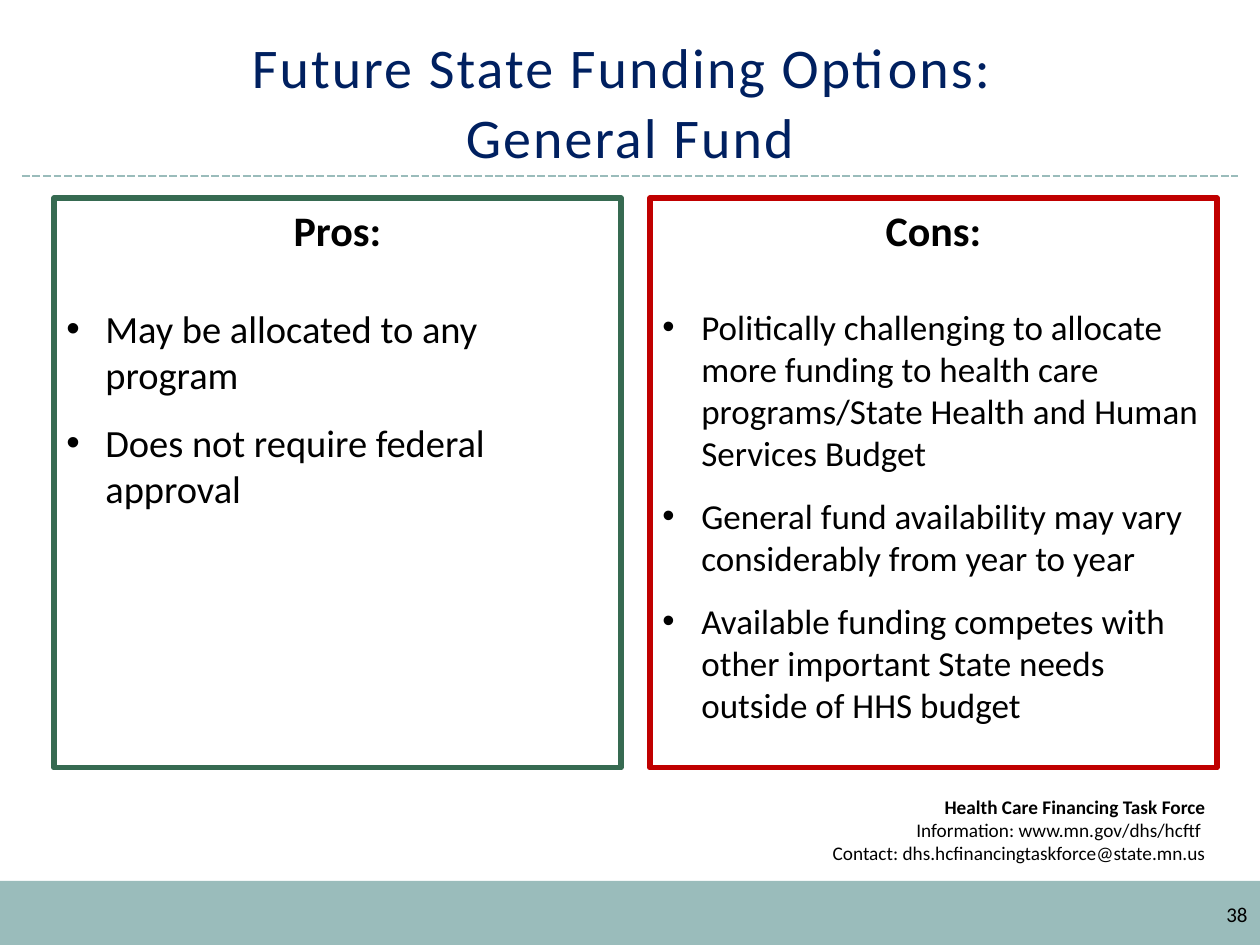
from lxml.etree import SubElement
from pptx import Presentation
from pptx.dml.color import RGBColor
from pptx.enum.dml import MSO_LINE
from pptx.enum.shapes import MSO_CONNECTOR, MSO_SHAPE
from pptx.enum.text import MSO_ANCHOR as ANCHOR, PP_ALIGN as ALIGN
from pptx.oxml.ns import qn
from pptx.util import Emu, Pt

TEAL = RGBColor(0x9A, 0xBC, 0xBB)
NAVY = RGBColor(0x00, 0x20, 0x60)
GREEN = RGBColor(0x36, 0x6A, 0x51)
RED = RGBColor(0xC0, 0x00, 0x00)
WHITE = RGBColor(0xFF, 0xFF, 0xFF)
BLACK = RGBColor(0x00, 0x00, 0x00)
FONT = "Calibri"


def px(n):
    """Turn pixels at 126 to the inch into EMU."""
    return Emu(round(n * 914400 / 126))


def write(p, text, size, color=BLACK, bold=False, align=ALIGN.LEFT):
    """Fill a paragraph and format its runs."""
    p.text = text
    p.alignment = align
    for r in p.runs:
        r.font.name = FONT
        r.font.size = Pt(size)
        r.font.bold = bold
        r.font.color.rgb = color


def add_bullet(p):
    """Give a paragraph a hanging round bullet."""
    pPr = p._p.get_or_add_pPr()
    pPr.set("marL", str(px(39)))
    pPr.set("indent", str(-px(39)))
    SubElement(pPr, qn("a:buFont")).set("typeface", "Arial")
    SubElement(pPr, qn("a:buChar")).set("char", "•")


def add_rect(s, box, fill, line=None):
    """Add a plain rectangle with an optional outline."""
    sp = s.shapes.add_shape(MSO_SHAPE.RECTANGLE, *map(px, box))
    sp.shadow.inherit = False
    sp.fill.solid()
    sp.fill.fore_color.rgb = fill
    if line is None:
        sp.line.fill.background()
    else:
        sp.line.color.rgb = line
        sp.line.width = Pt(3)
    return sp


def add_text(s, box, anchor=ANCHOR.TOP):
    """Add a wrapping text box and return its text frame."""
    tf = s.shapes.add_textbox(*map(px, box)).text_frame
    tf.word_wrap = True
    tf.vertical_anchor = anchor
    return tf


def add_title(s, box, text):
    """Add the centred title with the dashed rule beneath it."""
    x, y, w, h = box
    p = add_text(s, box, ANCHOR.BOTTOM).paragraphs[0]
    write(p, text, 32, NAVY, align=ALIGN.CENTER)
    p.line_spacing = Pt(40)
    for r in p.runs:
        r._r.get_or_add_rPr().set("spc", "120")
    rule = s.shapes.add_connector(
        MSO_CONNECTOR.STRAIGHT, px(x - 20), px(y + h), px(x + w + 20), px(y + h))
    rule.line.color.rgb = TEAL
    rule.line.width = Pt(1.5)
    rule.line.dash_style = MSO_LINE.SQUARE_DOT
    SubElement(rule._element.spPr, qn("a:effectLst"))


def add_panel(s, box, color, heading, size, items):
    """Add an outlined panel with a heading and bullets."""
    tf = add_rect(s, box, WHITE, color).text_frame
    tf.word_wrap = True
    tf.vertical_anchor = ANCHOR.TOP
    p = tf.paragraphs[0]
    write(p, heading, 24, bold=True, align=ALIGN.CENTER)
    p.space_after = Pt(29)
    for item in items:
        p = tf.add_paragraph()
        add_bullet(p)
        write(p, item, size)
        p.space_after = Pt(12)


def add_footer(s, box, number):
    """Add the contact lines, the bottom band and the page number."""
    x, y, w, h = box
    add_rect(s, (x, y + 92, w, h - 92), TEAL)
    p = add_text(s, (x + 572, y, 646, 84)).paragraphs[0]
    write(p, "Health Care Financing Task Force\vInformation: www.mn.gov/dhs/hcftf \v"
          "Contact: dhs.hcfinancingtaskforce@state.mn.us", 11, align=ALIGN.RIGHT)
    p.runs[0].font.bold = True
    p = add_text(s, (x + w - 294, y + h - 50, 294, 50)).paragraphs[0]
    write(p, number, 12, align=ALIGN.RIGHT)


def main():
    """Build the slide and save it."""
    prs = Presentation()
    prs.slide_width, prs.slide_height = px(1260), px(945)
    s = prs.slides.add_slide(prs.slide_layouts[6])
    add_footer(s, (0, 789, 1260, 156), "38")
    add_title(s, (42, 32, 1176, 144), "Future State Funding Options: \vGeneral Fund")
    panels = [
        (GREEN, "Pros:", 22, ["May be allocated to any program",
                              "Does not require federal approval"]),
        (RED, "Cons:", 20, [
            "Politically challenging to allocate more funding to health care "
            "programs/State Health and Human Services Budget",
            "General fund availability may vary considerably from year to year",
            "Available funding competes with other important State needs "
            "outside of HHS budget"]),
    ]
    for i, panel in enumerate(panels):
        add_panel(s, (54 + 596 * i, 198, 567, 570), *panel)
    prs.save("out.pptx")


if __name__ == "__main__":
    main()
